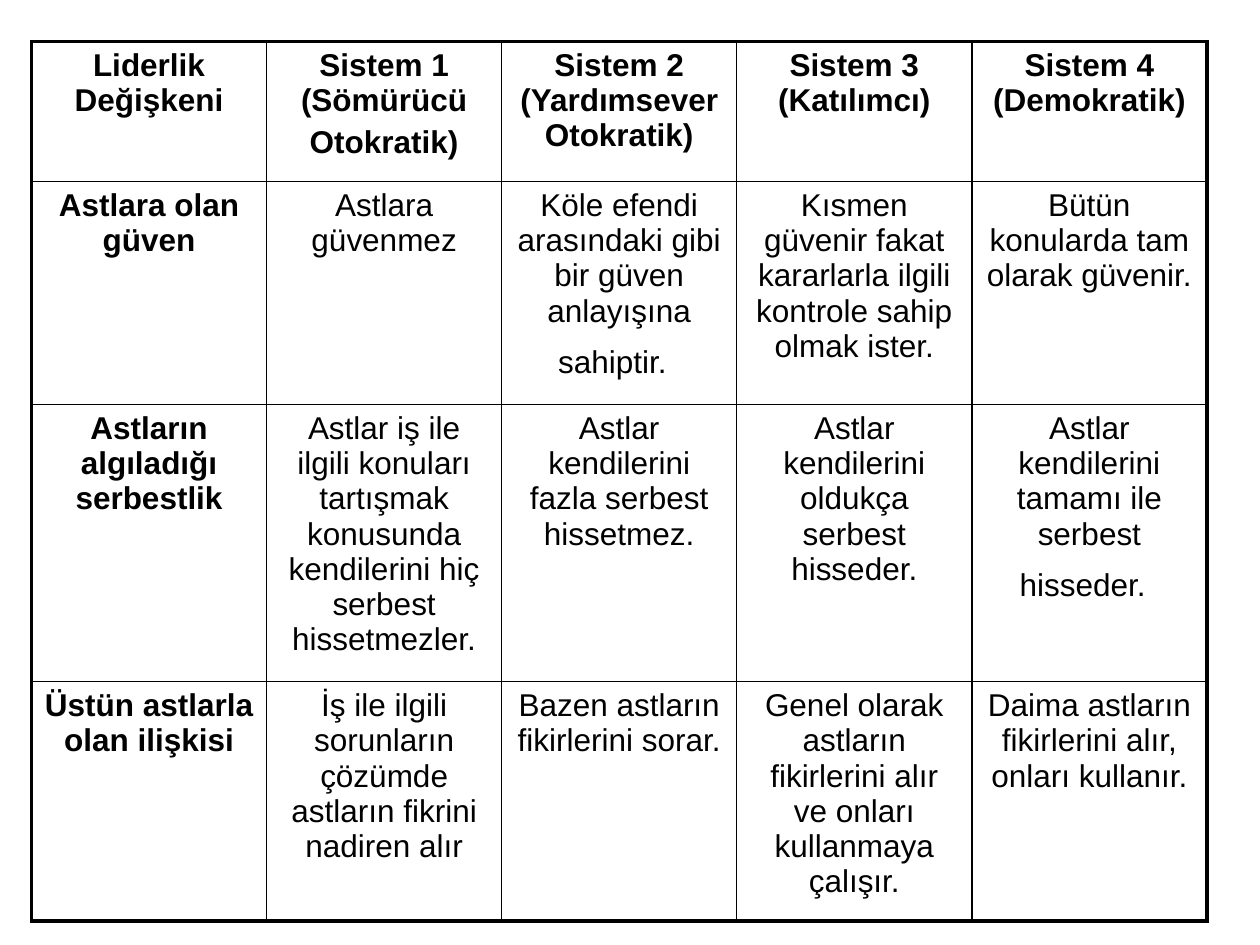
from lxml import etree
from pptx import Presentation, util as u
from pptx.dml.color import RGBColor
from pptx.enum import text
from pptx.oxml.ns import qn

COLORS = {"ink": "000000"}
SLIDE_WIDTH, SLIDE_HEIGHT = 10, 7.5
ROW_HEIGHTS = [1.11, 1.77, 2.2, 1.9]
TALL = 28  # size of a closing space that deepens its line

# A cell is a list of paragraphs; a paragraph is a list of (words, size) runs.
ROWS = [
    ["Liderlik Değişkeni", "Sistem 1 (Sömürücü\nOtokratik)",
     "Sistem 2 (Yardımsever Otokratik)", "Sistem 3 (Katılımcı)",
     "Sistem 4 (Demokratik)"],
    ["Astlara olan güven", "Astlara güvenmez",
     "Köle efendi arasındaki gibi bir güven anlayışına sahiptir.",
     "Kısmen güvenir fakat kararlarla ilgili kontrole sahip olmak ister.",
     "Bütün konularda tam olarak güvenir."],
    ["Astların algıladığı serbestlik",
     "Astlar iş ile ilgili konuları tartışmak konusunda kendilerini hiç "
     "serbest hissetmezler.",
     "Astlar kendilerini fazla serbest hissetmez.",
     "Astlar kendilerini oldukça serbest hisseder.",
     "Astlar kendilerini tamamı ile serbest hisseder."],
    ["Üstün astlarla olan ilişkisi",
     "İş ile ilgili sorunların çözümde astların fikrini nadiren alır",
     "Bazen astların fikirlerini sorar.",
     "Genel olarak astların fikirlerini alır ve onları kullanmaya çalışır.",
     "Daima astların fikirlerini alır, onları kullanır."],
]
TALL_ENDINGS = {(1, 2), (2, 4)}


def add_text(paragraph, words, size=18, bold=False, font="Arial", color="ink"):
    run = paragraph.add_run()
    run.text = words
    run.font.size = u.Pt(size)
    run.font.bold = bold
    run.font.name = font
    run.font.color.rgb = RGBColor.from_string(COLORS[color])


class SlideBuilder:
    thin, thick = 1, 2.25
    space_before = u.Pt(3.6)

    def __init__(self, presentation):
        self.presentation = presentation
        self.slide = presentation.slides.add_slide(presentation.slide_layouts[6])

    def table(self, rows, row_heights, left, top, width):
        """Place a ruled table; left, top and width are shares of the slide."""
        slide_width = self.presentation.slide_width
        slide_height = self.presentation.slide_height
        column_count = len(rows[0])
        table = self.slide.shapes.add_table(
            len(rows), column_count, int(left * slide_width),
            int(top * slide_height), int(width * slide_width),
            u.Inches(sum(row_heights))).table
        table.first_row = table.horz_banding = False
        for column in table.columns:
            column.width = int(width * slide_width / column_count)
        for r, height in enumerate(row_heights):
            table.rows[r].height = u.Inches(height)
            for c, words in enumerate(rows[r]):
                cell = table.cell(r, c)
                self.fill_cell(cell, words, bold=r == 0 or c == 0,
                               tall_ending=(r, c) in TALL_ENDINGS)
                self.borders(cell, lnL=c == 0, lnR=c == column_count - 1,
                             lnT=r == 0, lnB=r == len(rows) - 1)

    def fill_cell(self, cell, words, bold, tall_ending):
        cell.fill.background()
        frame = cell.text_frame
        for index, line in enumerate(words.split("\n")):
            paragraph = frame.add_paragraph() if index else frame.paragraphs[0]
            paragraph.alignment = text.PP_ALIGN.CENTER
            if index:
                paragraph.space_before = self.space_before
            add_text(paragraph, line, bold=bold)
        if tall_ending:
            add_text(paragraph, " ", size=TALL, bold=bold)

    def borders(self, cell, **outer_sides):
        """Rule each side, thick where it lies on the table's outer edge."""
        properties = cell._tc.get_or_add_tcPr()
        for index, (side, outer) in enumerate(outer_sides.items()):
            line = etree.Element(qn(f"a:{side}"))
            line.set("w", str(u.Pt(self.thick if outer else self.thin)))
            fill = etree.SubElement(line, qn("a:solidFill"))
            etree.SubElement(fill, qn("a:srgbClr")).set("val", COLORS["ink"])
            properties.insert(index, line)


def main():
    presentation = Presentation()
    presentation.slide_width = u.Inches(SLIDE_WIDTH)
    presentation.slide_height = u.Inches(SLIDE_HEIGHT)
    SlideBuilder(presentation).table(
        ROWS, ROW_HEIGHTS, left=0.25 / SLIDE_WIDTH, top=0.33 / SLIDE_HEIGHT,
        width=9.33 / SLIDE_WIDTH)
    presentation.save("out.pptx")


if __name__ == "__main__":
    main()
